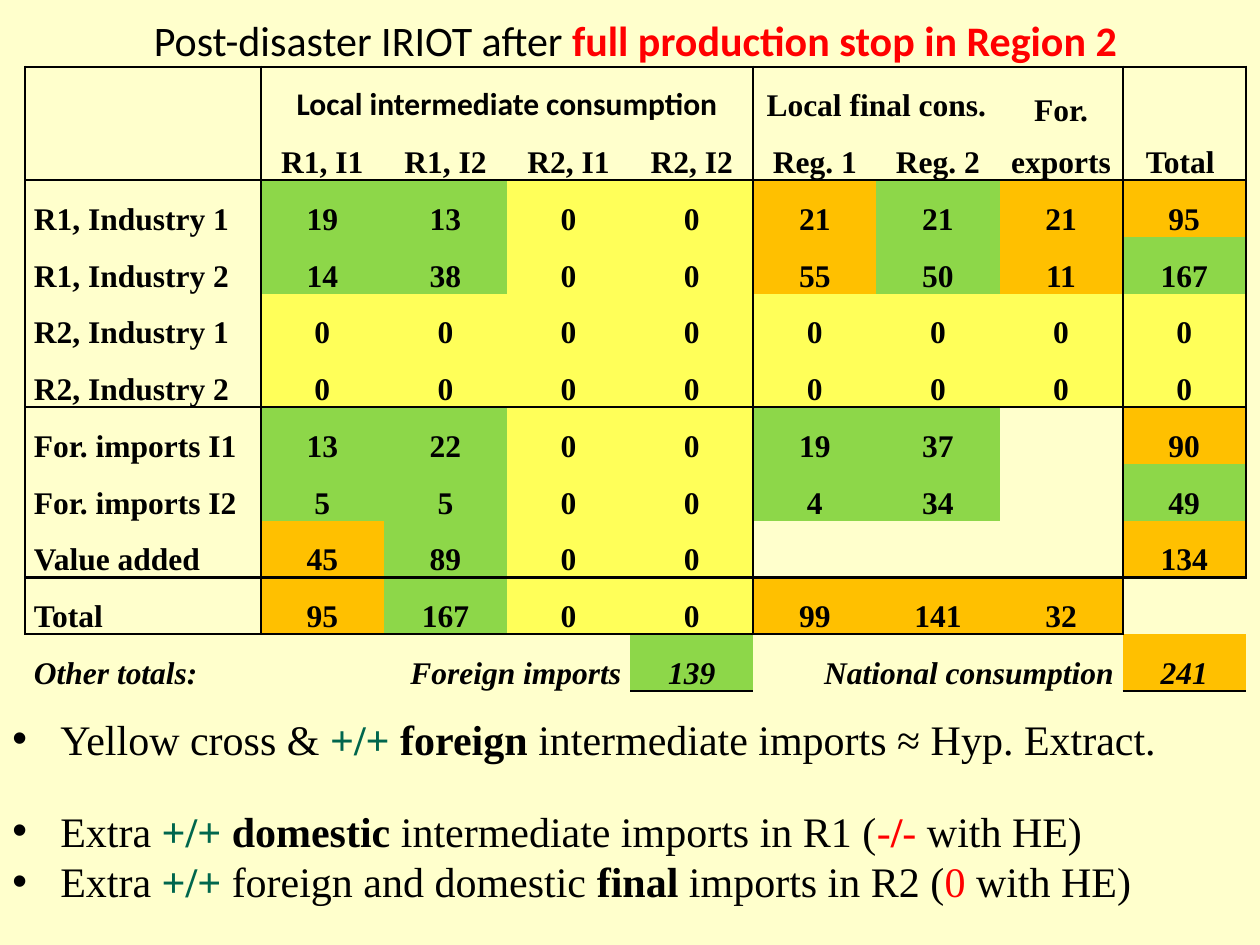
from lxml import etree
from pptx import Presentation
from pptx.dml.color import RGBColor
from pptx.enum.text import MSO_ANCHOR, MSO_AUTO_SIZE, PP_ALIGN
from pptx.oxml.ns import qn
from pptx.util import Inches, Pt

LEFT, CENTER, RIGHT = PP_ALIGN.LEFT, PP_ALIGN.CENTER, PP_ALIGN.RIGHT
BOTTOM = MSO_ANCHOR.BOTTOM
GROW = MSO_AUTO_SIZE.SHAPE_TO_FIT_TEXT
SERIF, SANS = "Times New Roman", "Calibri"
BLACK, RED, TEAL = "000000", "FF0000", "00664D"
FILLS = {"G": "8DD749", "Y": "FFFF59", "O": "FFC000"}

ROWS, COLS = 12, 9
ROW_GROUPS = [(1, 3), (3, 7), (7, 10), (10, 11)]
COL_GROUPS = [(0, 1), (1, 5), (5, 8), (8, 9)]
OPEN_BLOCK = ((10, 11), (8, 9))
UNDERLINED = [(12, 4), (12, 8)]
MERGES = [(0, 0, 0, 8), (1, 0, 2, 0), (1, 1, 1, 4), (1, 5, 1, 6), (1, 7, 2, 7),
          (1, 8, 2, 8), (11, 1, 11, 3), (11, 5, 11, 7)]
HEADERS = {
    (1, 5): "Local final cons.", (1, 7): "For. exports", (1, 8): "Total ",
    (2, 1): "R1, I1", (2, 2): "R1, I2", (2, 3): "R2, I1", (2, 4): "R2, I2",
    (2, 5): "Reg. 1", (2, 6): "Reg. 2",
}
DATA = [
    ("R1, Industry 1", "19 13 0 0 21 21 21 95", "GGYYOGOO"),
    ("R1, Industry 2", "14 38 0 0 55 50 11 167", "GGYYOGOG"),
    ("R2, Industry 1", "0 0 0 0 0 0 0 0", "YYYYYYYY"),
    ("R2, Industry 2", "0 0 0 0 0 0 0 0", "YYYYYYYY"),
    ("For. imports I1", "13 22 0 0 19 37 - 90", "GGYYGG-O"),
    ("For. imports I2", "5 5 0 0 4 34 - 49", "GGYYGG-G"),
    ("Value added", "45 89 0 0 - - - 134", "OGYY---O"),
    ("Total", "95 167 0 0 99 141 32 -", "OGYYOOO-"),
]
PLUS = ("+/+ ", {"color": TEAL, "bold": True})
HYP_EXTRACT = [("Yellow cross & ", {}), PLUS, ("foreign ", {"bold": True}),
               ("intermediate imports ≈ Hyp. Extract.", {})]
DOMESTIC = [("Extra ", {}), PLUS, ("domestic ", {"bold": True}),
            ("intermediate imports in R1 (", {}), ("-", {"color": RED}),
            ("/", {"color": RED, "bold": True}), ("- ", {"color": RED}),
            ("with HE)", {})]
FINAL = [("Extra ", {}), PLUS, ("foreign and domestic ", {}),
         ("final ", {"bold": True}), ("imports in R2 (", {}),
         ("0 ", {"color": RED}), ("with HE)", {})]


def rgb(hex_color):
    """Turn a hex string into a colour."""
    return RGBColor.from_string(hex_color)


def add_run(p, text, size=24, font=SERIF, color=BLACK, bold=False, italic=False):
    """Append a formatted run to a paragraph."""
    r = p.add_run()
    r.text = text
    f = r.font
    f.size, f.name, f.bold, f.italic = Pt(size), font, bold, italic
    f.color.rgb = rgb(color)


def add_bullets(s, top, width, height, items):
    """Add a text box with one bulleted paragraph per item."""
    tf = s.shapes.add_textbox(0, Inches(top), Inches(width), Inches(height)).text_frame
    tf.word_wrap = True
    tf.auto_size = GROW
    for i, runs in enumerate(items):
        p = tf.add_paragraph() if i else tf.paragraphs[0]
        pPr = p._p.get_or_add_pPr()
        pPr.set("marL", str(Inches(0.38)))
        pPr.set("indent", str(-Inches(0.38)))
        etree.SubElement(pPr, qn("a:buFont")).set("typeface", "Arial")
        etree.SubElement(pPr, qn("a:buChar")).set("char", "•")
        for text, style in runs:
            add_run(p, text, **style)


def ruled_edges():
    """Return the horizontal and vertical grid edges that carry a line."""
    across, down = set(UNDERLINED), set()
    for rows in ROW_GROUPS:
        for cols in COL_GROUPS:
            if (rows, cols) != OPEN_BLOCK:
                across |= {(r, c) for r in rows for c in range(*cols)}
                down |= {(r, c) for r in range(*rows) for c in cols}
    return across, down


def set_border(cell, side, ruled):
    """Draw or clear one side of a cell."""
    ln = etree.SubElement(cell._tc.get_or_add_tcPr(), qn(f"a:ln{side}"))
    if ruled:
        ln.set("w", str(Pt(1.5)))
        fill = etree.SubElement(ln, qn("a:solidFill"))
        etree.SubElement(fill, qn("a:srgbClr")).set("val", BLACK)
    else:
        etree.SubElement(ln, qn("a:noFill"))


def format_grid(table):
    """Merge cells, then set margins, borders and an empty fill everywhere."""
    for top, left, bottom, right in MERGES:
        table.cell(top, left).merge(table.cell(bottom, right))
    across, down = ruled_edges()
    for r in range(ROWS):
        for c in range(COLS):
            cell = table.cell(r, c)
            h, w = (cell.span_height, cell.span_width) if cell.is_merge_origin else (1, 1)
            cell.margin_left = cell.margin_right = Inches(0.07)
            cell.margin_top = cell.margin_bottom = 0
            cell.vertical_anchor = BOTTOM
            set_border(cell, "L", (r, c) in down)
            set_border(cell, "R", (r, c + w) in down)
            set_border(cell, "T", (r, c) in across)
            set_border(cell, "B", (r + h, c) in across)
            cell.fill.background()


def write_cell(cell, text, align=CENTER, fill=None, **style):
    """Put bold text and an optional fill in a cell."""
    p = cell.text_frame.paragraphs[0]
    p.alignment = align
    p.line_spacing = 1.5
    add_run(p, text, **{"size": 18, "bold": True, **style})
    if fill:
        cell.fill.solid()
        cell.fill.fore_color.rgb = rgb(fill)


def add_iriot_table(s):
    """Add the input-output table with its title row."""
    table = s.shapes.add_table(ROWS, COLS, Inches(0.2), Inches(0.13),
                               Inches(9.69), Inches(5.35)).table
    table.first_row = table.horz_banding = False
    for i, col in enumerate(table.columns):
        col.width = Inches((9.69 - 1.87) / 8 if i else 1.87)
    for i, row in enumerate(table.rows):
        row.height = Inches(0.45 if i else 0.4)
    format_grid(table)

    p = table.cell(0, 0).text_frame.paragraphs[0]
    p.alignment = CENTER
    add_run(p, "Post-disaster IRIOT after ", font=SANS)
    add_run(p, "full production stop in Region 2", font=SANS, color=RED, bold=True)

    write_cell(table.cell(1, 1), "Local intermediate consumption", font=SANS)
    for (r, c), text in HEADERS.items():
        write_cell(table.cell(r, c), text)
    for r, (label, values, fills) in enumerate(DATA, 3):
        write_cell(table.cell(r, 0), label, LEFT)
        for c, (value, key) in enumerate(zip(values.split(), fills), 1):
            if value != "-":
                write_cell(table.cell(r, c), value, fill=FILLS[key])
    for c, text, align, fill in [(0, "Other totals:", LEFT, None),
                                 (1, "Foreign imports", RIGHT, None),
                                 (4, "139", CENTER, FILLS["G"]),
                                 (5, "National consumption", RIGHT, None),
                                 (8, "241", CENTER, FILLS["O"])]:
        write_cell(table.cell(11, c), text, align, fill, italic=True)


def main():
    """Build the slide and save it."""
    prs = Presentation()
    prs.slide_width, prs.slide_height = Inches(10), Inches(7.5)
    s = prs.slides.add_slide(prs.slide_layouts[6])
    s.background.fill.solid()
    s.background.fill.fore_color.rgb = rgb("FFFFCC")
    add_bullets(s, 5.61, 9.99, 0.5, [HYP_EXTRACT])
    add_bullets(s, 6.34, 9.09, 0.91, [DOMESTIC, FINAL])
    add_iriot_table(s)
    prs.save("out.pptx")


if __name__ == "__main__":
    main()
